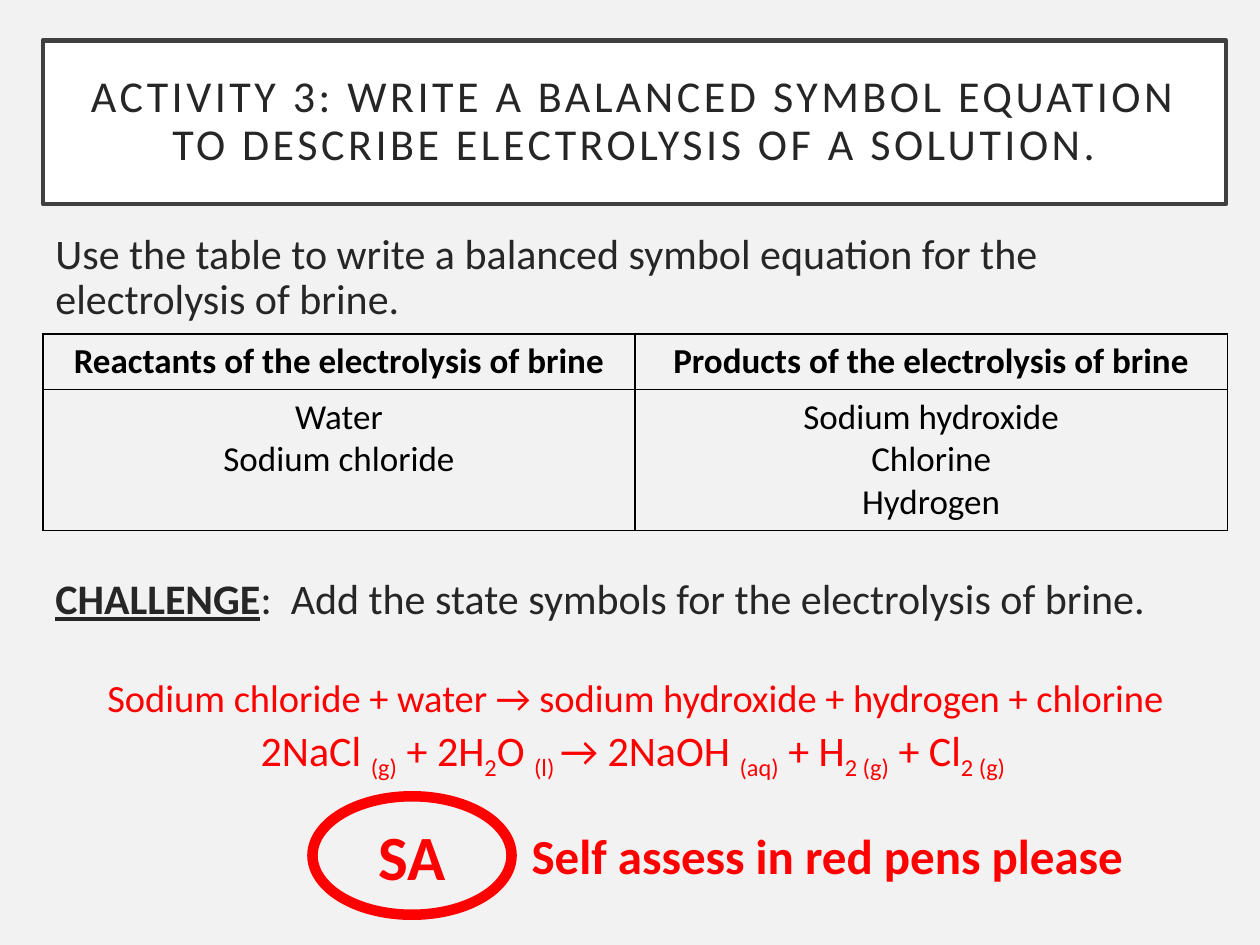
from dataclasses import dataclass

from lxml.etree import SubElement
from pptx import Presentation
from pptx.dml.color import RGBColor
from pptx.enum.shapes import MSO_SHAPE as Shape
from pptx.enum.text import MSO_ANCHOR as Anchor, MSO_AUTO_SIZE as AutoSize, PP_ALIGN as Align
from pptx.oxml import parse_xml
from pptx.oxml.ns import nsdecls, qn
from pptx.util import Inches, Pt


@dataclass(frozen=True)
class Theme:
    font: str = "Calibri"
    page: str = "F2F2F2"
    panel: str = "FFFFFF"
    frame: str = "404040"
    text: str = "262626"
    grid: str = "000000"
    answer: str = "FF0000"
    title_size: float = 25.2
    body_size: float = 24
    table_size: float = 20
    word_size: float = 22
    prompt_size: float = 28
    badge_size: float = 36


def color(value):
    return RGBColor.from_string(value)


class SlideBuilder:
    def __init__(self, slide, theme):
        self.slide, self.theme = slide, theme
        fill = slide.background.fill
        fill.solid()
        fill.fore_color.rgb = color(theme.page)

    def place(self, shape, left, top, width, height):
        shape.left, shape.top = Inches(left), Inches(top)
        shape.width, shape.height = Inches(width), Inches(height)

    def style(self, para, size, ink, bold=False, align=None):
        para.alignment = align
        for span in para.runs:
            font = span.font
            font.name, font.size, font.bold = self.theme.font, Pt(size), bold
            font.color.rgb = color(ink)

    def title(self, text, *bounds):
        box = self.slide.shapes.title
        self.place(box, *bounds)
        box.fill.solid()
        box.fill.fore_color.rgb = color(self.theme.panel)
        box.line.color.rgb = color(self.theme.frame)
        box.line.width = Pt(2.5)
        frame = box.text_frame
        frame.text = text
        frame.auto_size, frame.vertical_anchor = AutoSize.NONE, Anchor.MIDDLE
        frame.margin_left = frame.margin_right = Inches(0.2)
        frame.margin_top = frame.margin_bottom = Inches(0.2)
        para = frame.paragraphs[0]
        para.line_spacing = 0.9
        self.style(para, self.theme.title_size, self.theme.text, align=Align.CENTER)
        # Letter spacing of 2 pt
        para.runs[0].font._element.set("spc", "200")

    def body(self, task, label, challenge, gap, *bounds):
        box = self.slide.placeholders[1]
        self.place(box, *bounds)
        frame = box.text_frame
        frame.auto_size = AutoSize.NONE
        frame.text = task
        extra = frame.add_paragraph()
        for text in (label, challenge):
            extra.add_run().text = text
        for para, space in zip(frame.paragraphs, (10, gap)):
            para.line_spacing, para.space_before = 0.9, Pt(space)
            self.style(para, self.theme.body_size, self.theme.text)
            # No bullet, no indent
            props = para._p.get_or_add_pPr()
            props.set("marL", "0")
            props.set("indent", "0")
            SubElement(props, qn("a:buNone"))
        extra.runs[0].font.bold = extra.runs[0].font.underline = True

    def table(self, rows, heights, left, top, width):
        columns = len(rows[0])
        grid = self.slide.shapes.add_table(
            len(rows), columns, Inches(left), Inches(top),
            Inches(width), Inches(sum(heights))).table
        grid.horz_banding = False
        for column in grid.columns:
            column.width = Inches(width / columns)
        for r, (texts, height) in enumerate(zip(rows, heights)):
            grid.rows[r].height = Inches(height)
            for c, text in enumerate(texts):
                cell = grid.cell(r, c)
                cell.text = text
                cell.fill.background()
                self.borders(cell)
                for para in cell.text_frame.paragraphs:
                    self.style(para, self.theme.table_size, self.theme.grid,
                               bold=r == 0, align=Align.CENTER)

    def borders(self, cell):
        props = cell._tc.get_or_add_tcPr()
        for index, side in enumerate(("lnL", "lnR", "lnT", "lnB")):
            props.insert(index, parse_xml(
                f'<a:{side} {nsdecls("a")} w="{Pt(1)}"><a:solidFill>'
                f'<a:srgbClr val="{self.theme.grid}"/></a:solidFill></a:{side}>'))

    def text_box(self, text, size, *bounds, bold=False, align=None):
        box = self.slide.shapes.add_textbox(*map(Inches, bounds))
        frame = box.text_frame
        frame.word_wrap, frame.auto_size = True, AutoSize.SHAPE_TO_FIT_TEXT
        frame.text = text
        self.style(frame.paragraphs[0], size, self.theme.answer, bold, align)
        return frame

    def equation(self, frame, parts):
        """Add a formula line; every second part is a subscript."""
        para = frame.add_paragraph()
        para.line_spacing, para.space_after = 1.07, Pt(8)
        for index, text in enumerate(parts):
            span = para.add_run()
            span.text = text
            if index % 2:
                span.font._element.set("baseline", "-25000")
        self.style(para, self.theme.body_size, self.theme.answer, align=Align.CENTER)

    def badge(self, text, *bounds):
        oval = self.slide.shapes.add_shape(Shape.OVAL, *map(Inches, bounds))
        oval.shadow.inherit = False
        oval.fill.background()
        oval.line.color.rgb = color(self.theme.answer)
        oval.line.width = Pt(6)
        frame = oval.text_frame
        frame.text, frame.vertical_anchor = text, Anchor.MIDDLE
        self.style(frame.paragraphs[0], self.theme.badge_size,
                   self.theme.answer, True, Align.CENTER)


def main():
    deck = Presentation()
    deck.slide_width, deck.slide_height = Inches(10), Inches(7.5)
    theme = Theme()
    page = SlideBuilder(deck.slides.add_slide(deck.slide_layouts[1]), theme)

    # Task
    page.title("ACTIVITY 3: WRITE A BALANCED SYMBOL EQUATION "
               "TO DESCRIBE ELECTROLYSIS OF A SOLUTION.", 0.34, 0.32, 9.39, 1.3)
    page.body("Use the table to write a balanced symbol equation for the "
              "electrolysis of brine.", "CHALLENGE",
              ":  Add the state symbols for the electrolysis of brine.",
              145.5, 0.34, 1.8, 9.4, 3.78)

    # Reactants and products
    page.table([("Reactants of the electrolysis of brine",
                 "Products of the electrolysis of brine"),
                ("Water\nSodium chloride",
                 "Sodium hydroxide\nChlorine\nHydrogen")],
               (0.44, 1.12), 0.34, 2.65, 9.4)

    # Answers
    answers = page.text_box(
        "Sodium chloride + water → sodium hydroxide + hydrogen + chlorine",
        theme.word_size, 0.35, 5.3, 9.39, 0.9, align=Align.CENTER)
    page.equation(answers, ("2NaCl ", "(g)", " + 2H", "2", "O ", "(l) ", "→ 2NaOH ",
                            "(aq)", " + H", "2 (g)", " + Cl", "2 (g) "))

    # Self assessment
    page.badge("SA", 2.48, 6.32, 1.58, 0.94)
    page.text_box("Self assess in red pens please", theme.prompt_size,
                  4.12, 6.5, 5.62, 0.57, bold=True)

    deck.save("out.pptx")


if __name__ == "__main__":
    main()
